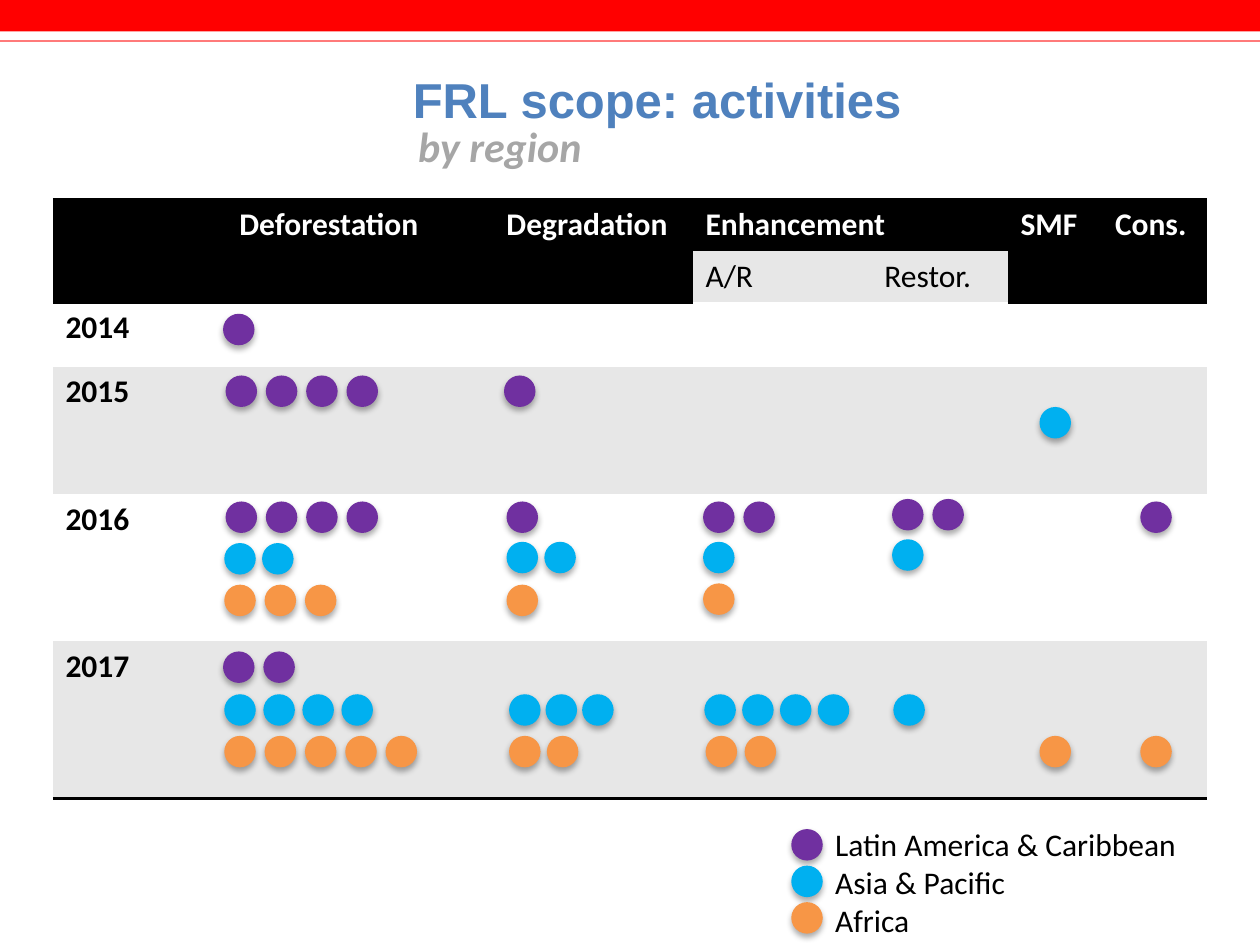
from dataclasses import dataclass

import pptx
import pptx.dml.color
import pptx.enum.shapes
import pptx.enum.text
import pptx.oxml
import pptx.oxml.ns
import pptx.util
from pptx.dml.color import RGBColor
from pptx.util import Inches, Pt

BLACK = RGBColor(0x00, 0x00, 0x00)
WHITE = RGBColor(0xFF, 0xFF, 0xFF)
BAND = RGBColor(0xE7, 0xE7, 0xE7)
RED = RGBColor(0xFF, 0x00, 0x00)
THIN_RED = RGBColor(0xFF, 0x33, 0x33)
TITLE_BLUE = RGBColor(0x4F, 0x81, 0xBD)
SUBTITLE_GRAY = RGBColor(0xA6, 0xA6, 0xA6)
LATIN_AMERICA = RGBColor(0x70, 0x30, 0xA0)
ASIA = RGBColor(0x00, 0xB0, 0xF0)
AFRICA = RGBColor(0xF7, 0x96, 0x46)

DOT_SIZE = 0.25
NO_STYLE_NO_GRID = "{2D5ABB26-0587-4C30-8999-92F81FD0307C}"
COLUMN_WIDTHS = [1.38, 2.12, 1.58, 1.42, 1.08, 0.75, 0.83]
ROW_HEIGHTS = [0.41, 0.41, 0.51, 1.01, 1.17, 1.25]
HEADERS = ["", "Deforestation", "Degradation", "Enhancement", "", "SMF", "Cons."]
SUBHEADERS = {3: "A/R", 4: "Restor."}
YEARS = ["2014", "2015", "2016", "2017"]
LEGEND = {
    "Latin America & Caribbean": LATIN_AMERICA,
    "Asia & Pacific": ASIA,
    "Africa": AFRICA,
}


@dataclass
class DotRun:
    """A horizontal run of equally spaced dots, in inches."""
    color: RGBColor
    left: float
    top: float
    count: int = 1
    pitch: float = 0.32


DOT_RUNS = [
    # 2014
    DotRun(LATIN_AMERICA, 1.77, 2.49),
    # 2015
    DotRun(LATIN_AMERICA, 1.79, 2.98, 4),
    DotRun(LATIN_AMERICA, 4.0, 2.98),
    DotRun(ASIA, 8.25, 3.23),
    # 2016
    DotRun(LATIN_AMERICA, 1.79, 3.98, 4),
    DotRun(LATIN_AMERICA, 4.02, 3.98),
    DotRun(LATIN_AMERICA, 5.58, 3.98, 2),
    DotRun(LATIN_AMERICA, 7.08, 3.96, 2),
    DotRun(LATIN_AMERICA, 9.05, 3.98),
    DotRun(ASIA, 1.78, 4.31, 2, 0.3),
    DotRun(ASIA, 4.02, 4.3, 2, 0.3),
    DotRun(ASIA, 5.58, 4.3),
    DotRun(ASIA, 7.08, 4.28),
    DotRun(AFRICA, 1.78, 4.64, 3),
    DotRun(AFRICA, 4.02, 4.64),
    DotRun(AFRICA, 5.58, 4.63),
    # 2017
    DotRun(LATIN_AMERICA, 1.77, 5.17, 2),
    DotRun(ASIA, 1.78, 5.51, 4, 0.31),
    DotRun(ASIA, 4.04, 5.51, 3, 0.29),
    DotRun(ASIA, 5.59, 5.51, 4, 0.3),
    DotRun(ASIA, 7.09, 5.51),
    DotRun(AFRICA, 1.78, 5.84, 5),
    DotRun(AFRICA, 4.04, 5.84, 2, 0.3),
    DotRun(AFRICA, 5.6, 5.84, 2, 0.31),
    DotRun(AFRICA, 8.25, 5.84),
    DotRun(AFRICA, 9.05, 5.84),
]


def set_font(paragraph, size: float, color: RGBColor, name: str = "Calibri",
             bold: bool = False, italic: bool = False) -> None:
    font = paragraph.font
    font.name, font.size, font.bold, font.italic = name, Pt(size), bold, italic
    font.color.rgb = color


def add_filled_shape(slide, kind, left: float, top: float, width: float,
                     height: float, color: RGBColor):
    shape = slide.shapes.add_shape(
        kind, Inches(left), Inches(top), Inches(width), Inches(height))
    shape.shadow.inherit = False
    shape.fill.solid()
    shape.fill.fore_color.rgb = color
    shape.line.fill.background()
    return shape


def add_dot(slide, left: float, top: float, color: RGBColor) -> None:
    dot = add_filled_shape(slide, pptx.enum.shapes.MSO_SHAPE.OVAL,
                           left, top, DOT_SIZE, DOT_SIZE, color)
    effects = dot._element.spPr.find(pptx.oxml.ns.qn("a:effectLst"))
    effects.append(pptx.oxml.parse_xml(
        f'<a:outerShdw {pptx.oxml.ns.nsdecls("a")} blurRad="{Pt(3.5)}" '
        f'dist="{Pt(2.2)}" dir="5400000" rotWithShape="0">'
        '<a:srgbClr val="000000"><a:alpha val="32000"/></a:srgbClr></a:outerShdw>'))


def add_dot_run(slide, run: DotRun) -> None:
    for index in range(run.count):
        add_dot(slide, run.left + index * run.pitch, run.top, run.color)


def add_text(slide, left: float, top: float, width: float, height: float,
             lines: list[str], **font) -> None:
    box = slide.shapes.add_textbox(
        Inches(left), Inches(top), Inches(width), Inches(height))
    frame = box.text_frame
    frame.word_wrap = False
    frame.auto_size = pptx.enum.text.MSO_AUTO_SIZE.SHAPE_TO_FIT_TEXT
    frame.text = "\n".join(lines)
    for paragraph in frame.paragraphs:
        set_font(paragraph, **font)


def format_cell(cell, text: str, fill: RGBColor, color: RGBColor = BLACK,
                bold: bool = True, borders: tuple[str, ...] = ()) -> None:
    # Borders come before the fill in the cell properties
    for side in borders:
        cell._tc.get_or_add_tcPr().append(pptx.oxml.parse_xml(
            f'<a:{side} {pptx.oxml.ns.nsdecls("a")} w="{Pt(2)}"><a:solidFill>'
            f'<a:srgbClr val="{BLACK}"/></a:solidFill></a:{side}>'))
    cell.fill.solid()
    cell.fill.fore_color.rgb = fill
    cell.text = text
    set_font(cell.text_frame.paragraphs[0], 18, color, bold=bold)


def add_activity_table(slide) -> None:
    frame = slide.shapes.add_table(
        len(ROW_HEIGHTS), len(COLUMN_WIDTHS), Inches(0.42), Inches(1.58),
        Inches(sum(COLUMN_WIDTHS)), Inches(sum(ROW_HEIGHTS)))
    table = frame.table
    table.first_row = table.horz_banding = False
    table._tbl.tblPr.find(pptx.oxml.ns.qn("a:tableStyleId")).text = NO_STYLE_NO_GRID
    for column, width in zip(table.columns, COLUMN_WIDTHS):
        column.width = Inches(width)
    for row, height in zip(table.rows, ROW_HEIGHTS):
        row.height = Inches(height)

    # Two header rows
    for column, header in enumerate(HEADERS):
        top_cell, lower_cell = table.cell(0, column), table.cell(1, column)
        if column in SUBHEADERS:
            format_cell(top_cell, header, BLACK, WHITE, borders=("lnT",))
            format_cell(lower_cell, SUBHEADERS[column], BAND, bold=False)
        else:
            format_cell(top_cell, header, BLACK, WHITE, borders=("lnT", "lnB"))
            format_cell(lower_cell, "", BLACK, borders=("lnB",))
            top_cell.merge(lower_cell)
    table.cell(0, 3).merge(table.cell(0, 4))

    # Year rows
    for index, year in enumerate(YEARS):
        borders = ("lnB",) if year == YEARS[-1] else ()
        for column in range(len(COLUMN_WIDTHS)):
            format_cell(table.cell(index + 2, column), "" if column else year,
                        BAND if index % 2 else WHITE, borders=borders)


def main() -> None:
    presentation = pptx.Presentation()
    presentation.slide_width, presentation.slide_height = Inches(10), Inches(7.5)
    slide = presentation.slides.add_slide(presentation.slide_layouts[5])

    # Top bars
    rectangle = pptx.enum.shapes.MSO_SHAPE.RECTANGLE
    add_filled_shape(slide, rectangle, 0, 0, 10, 0.25, RED)
    add_filled_shape(slide, rectangle, 0, 0.32, 10, 0.01, THIN_RED)

    # Title and subtitle
    title = slide.shapes.title
    title.left, title.top = Inches(1.63), Inches(0.5)
    title.width, title.height = Inches(7.17), Inches(0.57)
    title.text_frame.text = "FRL scope: activities"
    title.text_frame.vertical_anchor = pptx.enum.text.MSO_ANCHOR.MIDDLE
    paragraph = title.text_frame.paragraphs[0]
    paragraph.alignment = pptx.enum.text.PP_ALIGN.CENTER
    set_font(paragraph, 28, TITLE_BLUE, name="Arial", bold=True)
    add_text(slide, 3.22, 0.91, 1.5, 0.5, ["by region"],
             size=24, color=SUBTITLE_GRAY, bold=True, italic=True)

    # Activities by year
    add_activity_table(slide)
    for run in DOT_RUNS:
        add_dot_run(slide, run)

    # Legend
    for index, color in enumerate(LEGEND.values()):
        add_dot(slide, 6.28, 6.58 + index * 0.29, color)
    add_text(slide, 6.53, 6.5, 2.94, 1.01, list(LEGEND), size=18, color=BLACK)

    presentation.save("out.pptx")


if __name__ == "__main__":
    main()
